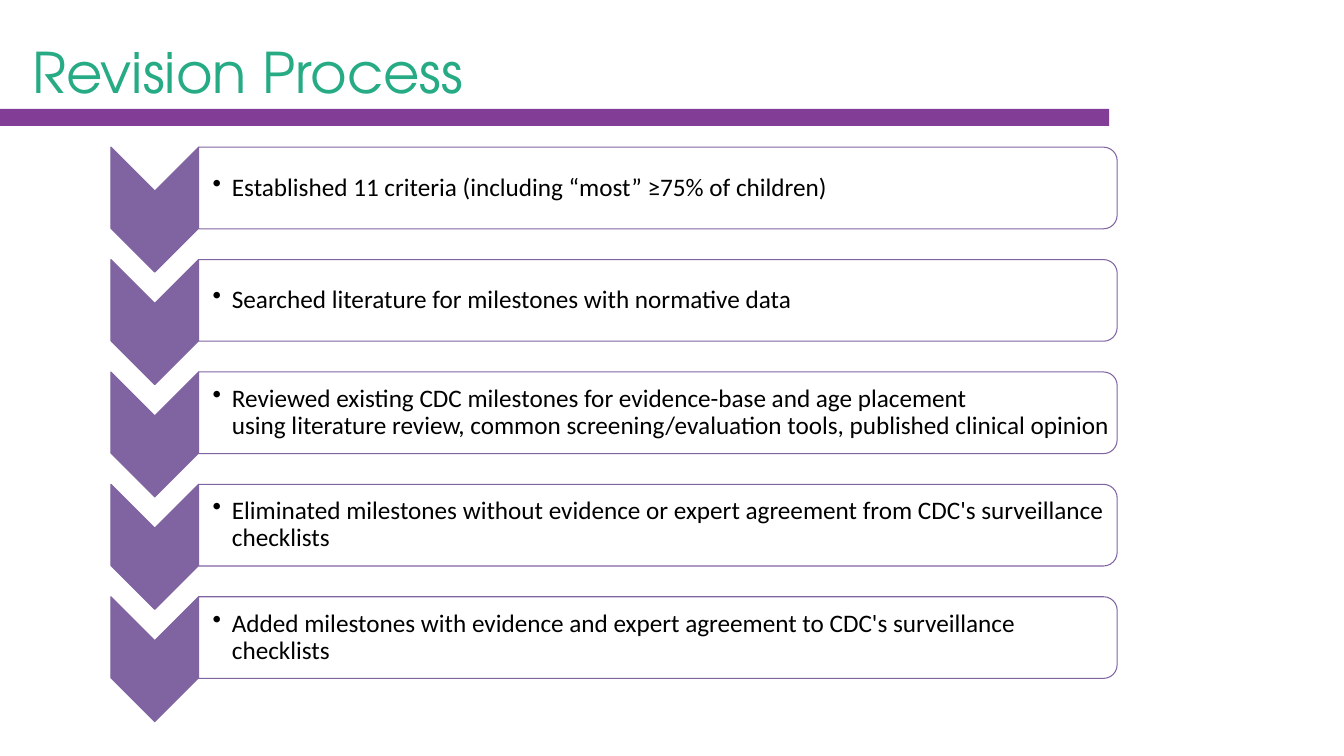
"""Build the Revision Process slide: five steps down a chevron column."""
from dataclasses import dataclass

from lxml import etree
from pptx import Presentation
from pptx.dml.color import RGBColor
from pptx.enum.shapes import MSO_SHAPE
from pptx.enum.text import MSO_ANCHOR, PP_ALIGN
from pptx.oxml.ns import qn
from pptx.util import Inches, Pt

RECT = MSO_SHAPE.RECTANGLE
CHEVRON = MSO_SHAPE.CHEVRON
PANEL = MSO_SHAPE.ROUND_2_SAME_RECTANGLE
MIDDLE = MSO_ANCHOR.MIDDLE
LEFT = PP_ALIGN.LEFT

TITLE = "Revision Process"
STEPS = [
    ["Established 11 criteria (including “most” ≥75% of children)"],
    ["Searched literature for milestones with normative data"],
    ["Reviewed existing CDC milestones for evidence-base and age placement",
     "using literature review, common screening/evaluation tools, "
     "published clinical opinion"],
    ["Eliminated milestones without evidence or expert agreement "
     "from CDC's surveillance checklists"],
    ["Added milestones with evidence and expert agreement "
     "to CDC's surveillance checklists"],
]


@dataclass(frozen=True)
class Theme:
    """Colours, fonts and sizes of the slide."""
    green: str = "26AB84"
    bar: str = "823D97"
    step: str = "8064A2"
    white: str = "FFFFFF"
    black: str = "000000"
    head: str = "TeX Gyre Adventor"
    body: str = "Calibri"
    big: int = 40
    small: int = 18
    rule: float = 0.75


THEME = Theme()
WIDE, HIGH = 13.33, 7.5
TOP, PITCH = 1.46, 1.115
ARROW_X, ARROW_W, ARROW_H = 1.1, 0.87, 1.24
PANEL_X, PANEL_W, PANEL_H = 1.97, 9.11, 0.81
TEXT_W, TEXT_H = 9.07, 0.73
INDENT = 0.19


def add_shape(slide, kind, box, fill, line=None, turn=0):
    """Draw a shape whose visible frame is box, turned by 0 or 90 degrees."""
    x, y, w, h = box
    if turn:
        x, y, w, h = x + (w - h) / 2, y + (h - w) / 2, h, w
    shape = slide.shapes.add_shape(kind, *map(Inches, (x, y, w, h)))
    shape.rotation = turn
    shape.shadow.inherit = False
    shape.fill.solid()
    shape.fill.fore_color.rgb = RGBColor.from_string(fill)
    if line:
        shape.line.color.rgb = RGBColor.from_string(line)
        shape.line.width = Pt(THEME.rule)
    else:
        shape.line.fill.background()


def add_text(slide, box, lines, face, size, color, pads, bullet=False):
    """Write one paragraph, with a line break between its lines."""
    frame = slide.shapes.add_textbox(*map(Inches, box)).text_frame
    frame.word_wrap = True
    frame.vertical_anchor = MIDDLE
    (frame.margin_left, frame.margin_top,
     frame.margin_right, frame.margin_bottom) = map(Inches, pads)
    para = frame.paragraphs[0]
    para.alignment = LEFT
    if bullet:
        para.line_spacing = 0.9
        props = para._p.get_or_add_pPr()
        props.set("marL", str(Inches(INDENT)))
        props.set("indent", str(-Inches(INDENT)))
        etree.SubElement(props, qn("a:buChar")).set("char", "•")
    for num, line in enumerate(lines):
        if num:
            para.add_line_break()
        run = para.add_run()
        run.text = line
        run.font.name = face
        run.font.size = Pt(size)
        run.font.color.rgb = RGBColor.from_string(color)


def add_step(slide, row, lines):
    """Draw one row: arrow, panel and text."""
    top = TOP + row * PITCH
    add_shape(slide, CHEVRON, (ARROW_X, top, ARROW_W, ARROW_H),
              THEME.step, THEME.step, 90)
    add_shape(slide, PANEL, (PANEL_X, top, PANEL_W, PANEL_H),
              THEME.white, THEME.step, 90)
    text_y = top + (PANEL_H - TEXT_H) / 2
    add_text(slide, (PANEL_X, text_y, TEXT_W, TEXT_H), lines, THEME.body,
             THEME.small, THEME.black, (0.14, 0.01, 0.01, 0.01), True)


def main():
    """Build and save the slide."""
    deck = Presentation()
    deck.slide_width, deck.slide_height = Inches(WIDE), Inches(HIGH)
    slide = deck.slides.add_slide(deck.slide_layouts[6])
    add_shape(slide, RECT, (0, 1.08, 11, 0.17), THEME.bar)
    add_text(slide, (0.22, 0.33, 12, 0.75), [TITLE], THEME.head,
             THEME.big, THEME.green, (0.1, 0.05, 0.1, 0.05))
    for row, lines in enumerate(STEPS):
        add_step(slide, row, lines)
    deck.save("out.pptx")


if __name__ == "__main__":
    main()
